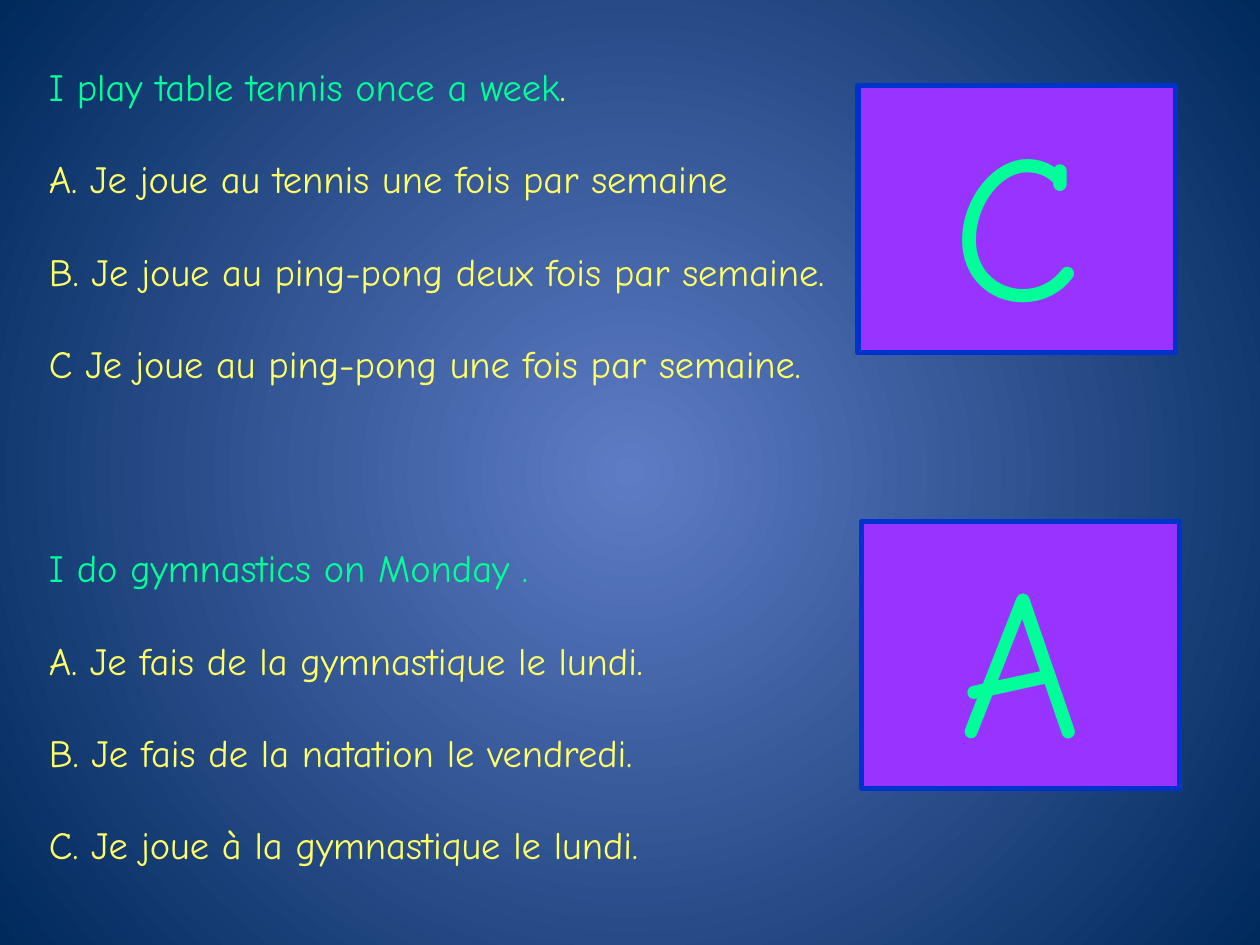
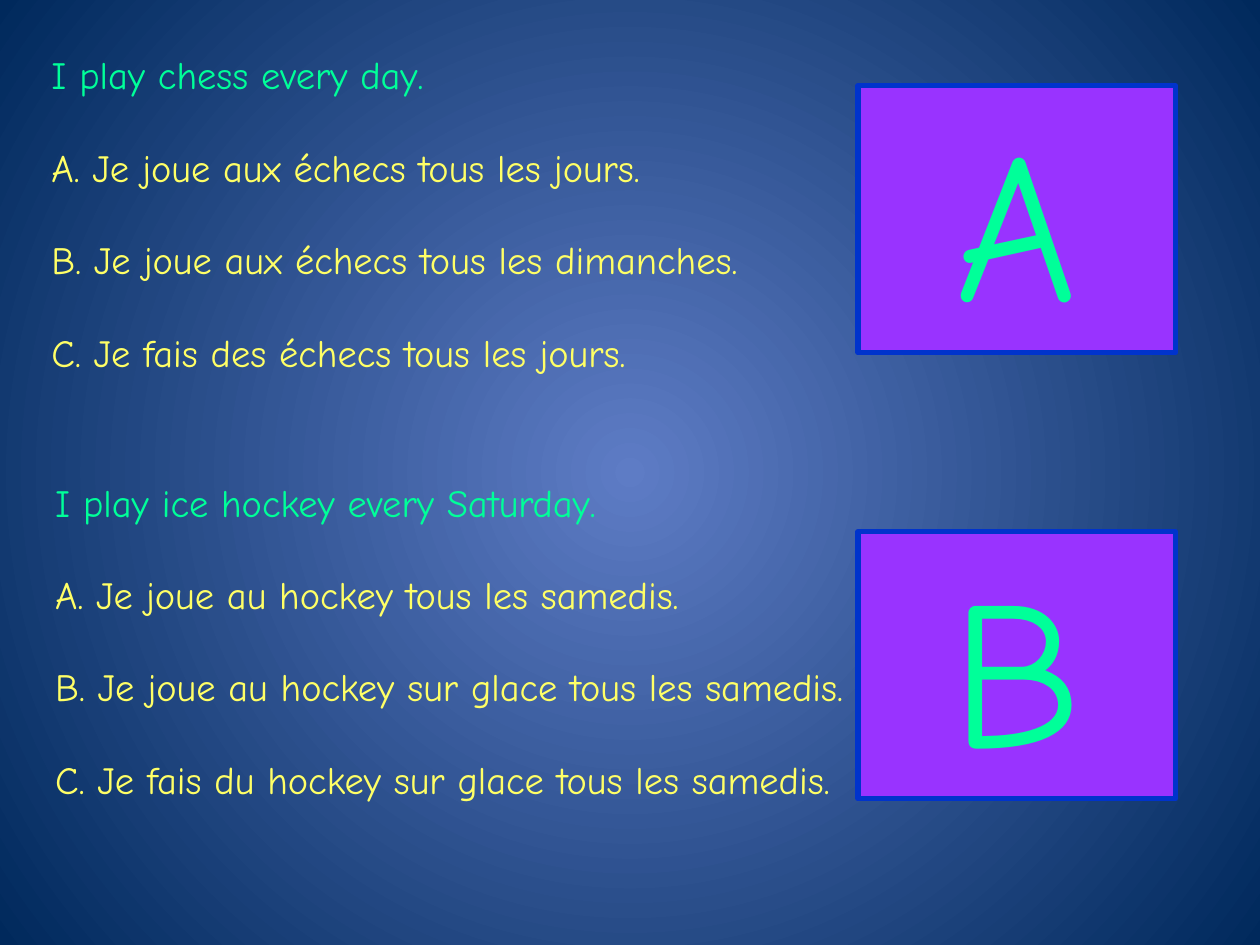
from dataclasses import dataclass

from lxml import etree
from pptx import Presentation
from pptx import util as u
from pptx.dml.color import RGBColor
from pptx.enum import shapes, text
from pptx.oxml import ns

PX = 9144
FONT = "Comic Neue"
GLOW = RGBColor(0x5E, 0x7C, 0xC5)
NAVY = RGBColor(0x00, 0x29, 0x5C)
MINT = RGBColor(0x00, 0xFF, 0x99)
YELLOW = RGBColor(0xFF, 0xFF, 0x66)
PURPLE = RGBColor(0x99, 0x33, 0xFF)
BLUE = RGBColor(0x00, 0x33, 0xCC)
CARD_WIDTH, CARD_HEIGHT = 252, 212
TEXT_SIZE, LETTER_SIZE = 22, 120
OPTION_GAP = 26.4


@dataclass(frozen=True)
class Question:
    """A prompt with its options, and the card that shows the answer."""

    frame: tuple[int, int, int, int]
    prompt: str
    options: tuple[str, ...]
    answer: str
    card_at: tuple[int, int]
    numbered: bool = True
    full_stop: str = ""


QUIZ = (
    (
        Question(
            (29, 45, 651, 380),
            "I play table tennis once a week",
            (
                "A. Je joue au tennis une fois par semaine",
                "B. Je joue au ping-pong deux fois par semaine.",
                "C Je joue au ping-pong une fois par semaine.",
            ),
            "C", (681, 68), numbered=False, full_stop=".",
        ),
        Question(
            (29, 427, 684, 306),
            "I do gymnastics on Monday .",
            (
                " Je fais de la gymnastique le lundi.",
                " Je fais de la natation le vendredi.",
                " Je joue à la gymnastique le lundi.",
            ),
            "A", (684, 414),
        ),
    ),
    (
        Question(
            (31, 36, 651, 306),
            "I play chess every day.",
            (
                " Je joue aux échecs tous les jours.",
                " Je joue aux échecs tous les dimanches.",
                " Je fais des échecs tous les jours.",
            ),
            "A", (681, 68),
        ),
        Question(
            (34, 375, 684, 380),
            "I play ice hockey every Saturday.",
            (
                " Je joue au hockey tous les samedis.",
                " Je joue au hockey sur glace tous les samedis.",
                " Je fais du hockey sur glace tous les samedis.",
            ),
            "B", (681, 422),
        ),
    ),
)


def paint_background(master) -> None:
    """Give every page the same radial gradient."""
    fill = master.background.fill
    fill.gradient()
    for stop, colour in zip(fill.gradient_stops, (GLOW, NAVY)):
        stop.color.rgb = colour
    linear = next(master.element.iter(ns.qn("a:lin")))
    radial = etree.Element(ns.qn("a:path"), {"path": "circle"})
    sides = {side: "50000" for side in "ltrb"}
    etree.SubElement(radial, ns.qn("a:fillToRect"), sides)
    linear.getparent().replace(linear, radial)


def add_span(para, words: str, colour: RGBColor, size: int = TEXT_SIZE) -> None:
    """Add one run in the quiz font."""
    span = para.add_run()
    span.text = words
    span.font.name = FONT
    span.font.size = u.Pt(size)
    span.font.color.rgb = colour


def number_option(para) -> None:
    """Letter an option automatically as A., B., C."""
    props = para._p.get_or_add_pPr()
    props.set("marL", "0")
    props.set("indent", "0")
    colour = etree.SubElement(props, ns.qn("a:buClr"))
    etree.SubElement(colour, ns.qn("a:srgbClr"), {"val": str(YELLOW)})
    etree.SubElement(props, ns.qn("a:buFont"), {"typeface": FONT})
    etree.SubElement(props, ns.qn("a:buAutoNum"), {"type": "alphaUcPeriod"})


def add_question(page, question: Question) -> None:
    """Write the prompt and its options."""
    box = page.shapes.add_textbox(*(side * PX for side in question.frame))
    frame = box.text_frame
    frame.word_wrap = True
    para = frame.paragraphs[0]
    add_span(para, question.prompt, MINT)
    if question.full_stop:
        add_span(para, question.full_stop, YELLOW)
    for option in question.options:
        para = frame.add_paragraph()
        para.space_before = u.Pt(OPTION_GAP)
        if question.numbered:
            number_option(para)
        add_span(para, option, YELLOW)


def add_card(page, question: Question) -> None:
    """Draw the card with the answer's letter."""
    left, top = question.card_at
    card = page.shapes.add_shape(
        shapes.MSO_SHAPE.RECTANGLE,
        left * PX, top * PX, CARD_WIDTH * PX, CARD_HEIGHT * PX,
    )
    card.shadow.inherit = False
    card.fill.solid()
    card.fill.fore_color.rgb = PURPLE
    card.line.color.rgb = BLUE
    card.line.width = u.Pt(3)
    frame = card.text_frame
    frame.word_wrap = True
    frame.vertical_anchor = text.MSO_ANCHOR.TOP
    para = frame.paragraphs[0]
    para.alignment = text.PP_ALIGN.CENTER
    add_span(para, question.answer, MINT, LETTER_SIZE)


def main() -> None:
    """Build and save the quiz."""
    deck = Presentation()
    deck.slide_width, deck.slide_height = 1000 * PX, 750 * PX
    paint_background(deck.slide_master)
    for questions in QUIZ:
        page = deck.slides.add_slide(deck.slide_layouts[6])
        for question in questions:
            add_question(page, question)
            add_card(page, question)
    deck.save("out.pptx")


if __name__ == "__main__":
    main()
